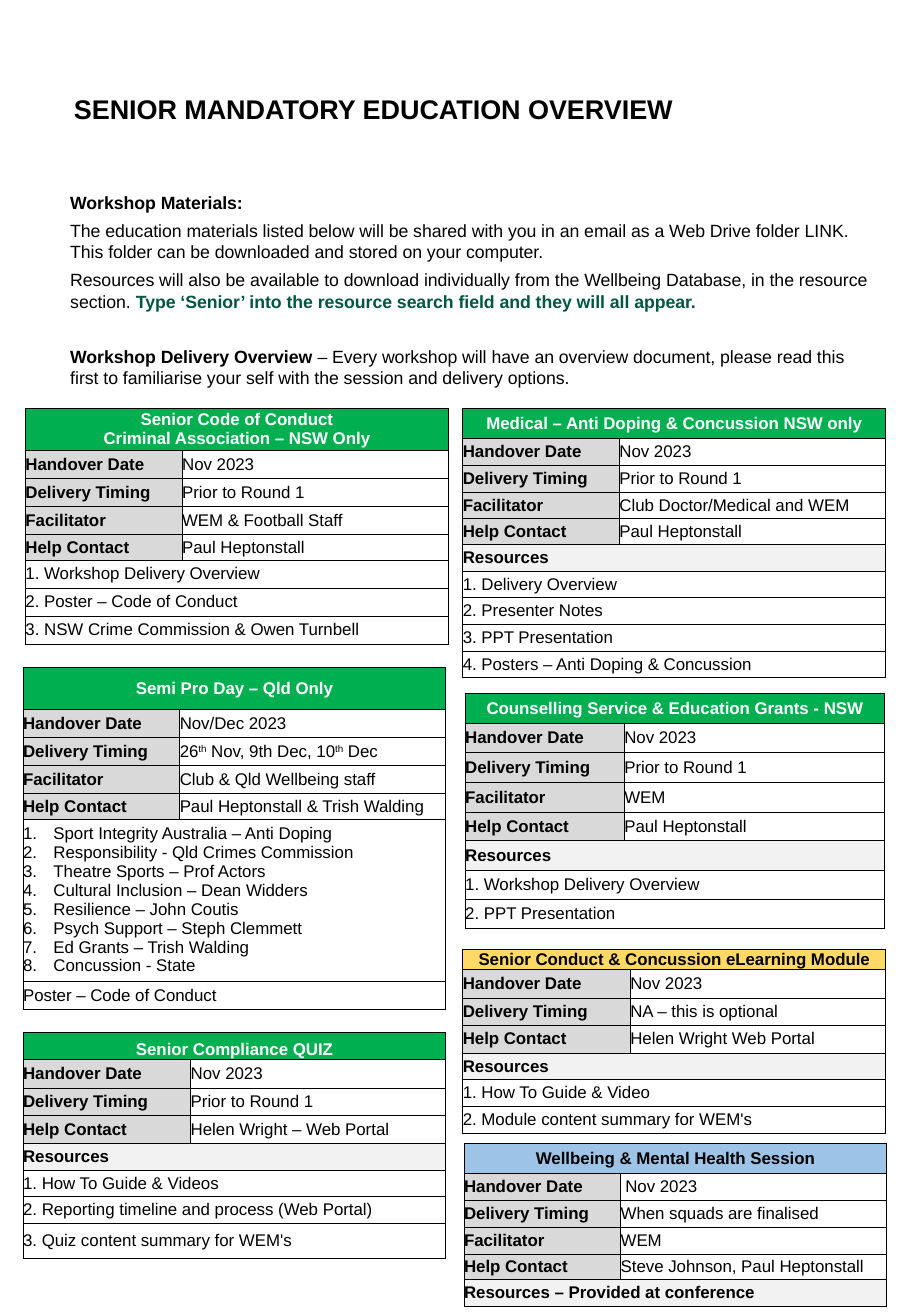
import pptx
import pptx.util
import pptx.dml.color
import pptx.enum.text
import pptx.oxml
import pptx.oxml.ns
from lxml import etree

Inches = pptx.util.Inches
Pt = pptx.util.Pt
RGBColor = pptx.dml.color.RGBColor
ALIGN = pptx.enum.text.PP_ALIGN
ANCHOR = pptx.enum.text.MSO_ANCHOR

BLACK = RGBColor(0x00, 0x00, 0x00)
WHITE = RGBColor(0xFF, 0xFF, 0xFF)
DARK_GREEN = RGBColor(0x00, 0x57, 0x3F)
GREEN = RGBColor(0x00, 0xB0, 0x50)
YELLOW = RGBColor(0xFF, 0xD9, 0x66)
BLUE = RGBColor(0x9D, 0xC3, 0xE6)
LABEL_GREY = RGBColor(0xD9, 0xD9, 0xD9)
PALE_GREY = RGBColor(0xF2, 0xF2, 0xF2)

LABELS = ["Handover Date", "Delivery Timing", "Facilitator", "Help Contact"]


def add_run(p, text, size, color=BLACK, bold=False):
    r = p.add_run()
    r.text = text
    r.font.name = "Arial"
    r.font.size = Pt(size)
    r.font.color.rgb = color
    r.font.bold = bold
    return r


def fill_cell(cell, content, fill=None, color=BLACK, bold=False, align=ALIGN.LEFT, anchor=ANCHOR.MIDDLE):
    cell.margin_left = cell.margin_right = cell.margin_top = cell.margin_bottom = 0
    cell.vertical_anchor = anchor
    tcPr = cell._tc.get_or_add_tcPr()
    for side in ("lnL", "lnR", "lnT", "lnB"):
        ln = etree.SubElement(tcPr, pptx.oxml.ns.qn("a:" + side), w="6350")
        solid = etree.SubElement(ln, pptx.oxml.ns.qn("a:solidFill"))
        etree.SubElement(solid, pptx.oxml.ns.qn("a:srgbClr"), val=str(BLACK))
    if fill is None:
        cell.fill.background()
    else:
        cell.fill.solid()
        cell.fill.fore_color.rgb = fill
    numbered = isinstance(content, list)
    tf = cell.text_frame
    for i, line in enumerate(content if numbered else content.split("\n")):
        p = tf.paragraphs[0] if i == 0 else tf.add_paragraph()
        p.alignment = align
        if numbered:
            pPr = p._p.get_or_add_pPr()
            pPr.set("marL", str(Inches(0.25)))
            pPr.set("indent", str(-Inches(0.25)))
            etree.SubElement(pPr, pptx.oxml.ns.qn("a:buFont"), typeface="+mj-lt")
            etree.SubElement(pPr, pptx.oxml.ns.qn("a:buAutoNum"), type="arabicPeriod")
        for k, part in enumerate(line.split("^")):
            r = add_run(p, part, 10, color, bold)
            if k % 2:
                r._r.get_or_add_rPr().set("baseline", "30000")


prs = pptx.Presentation()
prs.slide_width = Inches(7.5)
prs.slide_height = Inches(10.83)
s = prs.slides.add_slide(prs.slide_layouts[6])

title = s.shapes.add_textbox(Inches(0.51), Inches(0.58), Inches(6.48), Inches(0.66))
tf = title.text_frame
tf.word_wrap = True
tf.vertical_anchor = ANCHOR.MIDDLE
p = tf.paragraphs[0]
p.line_spacing = 0.9
add_run(p, "SENIOR MANDATORY EDUCATION OVERVIEW", 16, bold=True)

INTRO = [
    (0, [("Workshop Materials:", BLACK, True)]),
    (2, [("The education materials listed below will be shared with you in an email as a Web Drive folder LINK. "
          "This folder can be downloaded and stored on your computer.", BLACK, False)]),
    (2, [("Resources will also be available to download individually from the Wellbeing Database, "
          "in the resource section. ", BLACK, False),
         ("Type ‘Senior’ into the resource search field and they will all appear.", DARK_GREEN, True)]),
    (18, [("Workshop Delivery Overview ", BLACK, True),
          ("– Every workshop will have an overview document, please read this first to familiarise "
           "your self with the session and delivery options.", BLACK, False)]),
]
intro = s.shapes.add_textbox(Inches(0.48), Inches(1.53), Inches(6.81), Inches(1.75))
tf = intro.text_frame
tf.word_wrap = True
for i, (before, runs) in enumerate(INTRO):
    p = tf.paragraphs[0] if i == 0 else tf.add_paragraph()
    p.space_before = Pt(before)
    p.space_after = Pt(2)
    for text, color, bold in runs:
        add_run(p, text, 10.5, color, bold)

CARDS = [
    (0.21, 3.36, [1.29, 2.19], [0.35, 0.23, 0.23, 0.23, 0.21, 0.23, 0.23, 0.23],
     "Senior Code of Conduct\nCriminal Association – NSW Only", GREEN, WHITE, ANCHOR.MIDDLE,
     ["Nov 2023", "Prior to Round 1", "WEM & Football Staff", "Paul Heptonstall"],
     ["1. Workshop Delivery Overview", "2. Poster – Code of Conduct",
      "3. NSW Crime Commission & Owen Turnbell"]),
    (0.19, 5.49, [1.29, 2.19], [0.35, 0.23, 0.23, 0.23, 0.21, 1.33, 0.23],
     "Semi Pro Day – Qld Only", GREEN, WHITE, ANCHOR.MIDDLE,
     ["Nov/Dec 2023", "26^th^ Nov, 9th Dec, 10^th^ Dec", "Club & Qld Wellbeing staff",
      "Paul Heptonstall & Trish Walding"],
     [["Sport Integrity Australia – Anti Doping", "Responsibility - Qld Crimes Commission",
       "Theatre Sports – Prof Actors", "Cultural Inclusion – Dean Widders", "Resilience – John Coutis",
       "Psych Support – Steph Clemmett", "Ed Grants – Trish Walding", "Concussion - State"],
      "Poster – Code of Conduct"]),
    (0.19, 8.5, [1.38, 2.1], [0.22, 0.24, 0.22, 0.23, 0.22, 0.22, 0.22, 0.29],
     "Senior Compliance QUIZ", GREEN, WHITE, ANCHOR.BOTTOM,
     ["Nov 2023", "Prior to Round 1", None, "Helen Wright – Web Portal"],
     ["Resources", "1. How To Guide & Videos", "2. Reporting timeline and process (Web Portal)",
      "3. Quiz content summary for WEM's"]),
    (3.81, 3.36, [1.29, 2.19], [0.25, 0.22, 0.22, 0.22, 0.21, 0.22, 0.22, 0.22, 0.22, 0.22],
     "Medical – Anti Doping & Concussion NSW only", GREEN, WHITE, ANCHOR.MIDDLE,
     ["Nov 2023", "Prior to Round 1", "Club Doctor/Medical and WEM", "Paul Heptonstall"],
     ["Resources", "1. Delivery Overview", "2. Presenter Notes", "3. PPT Presentation",
      "4. Posters – Anti Doping & Concussion"]),
    (3.83, 5.71, [1.31, 2.14], [0.24, 0.24, 0.25, 0.25, 0.23, 0.24, 0.24, 0.24],
     "Counselling Service & Education Grants - NSW", GREEN, WHITE, ANCHOR.MIDDLE,
     ["Nov 2023", "Prior to Round 1", "WEM", "Paul Heptonstall"],
     ["Resources", "1. Workshop Delivery Overview", "2. PPT Presentation"]),
    (3.81, 7.81, [1.38, 2.1], [0.16, 0.24, 0.22, 0.23, 0.22, 0.22, 0.22],
     "Senior Conduct & Concussion eLearning Module", YELLOW, BLACK, ANCHOR.BOTTOM,
     ["Nov 2023", "NA – this is optional", None, "Helen Wright Web Portal"],
     ["Resources", "1. How To Guide & Video", "2. Module content summary for WEM's"]),
    (3.82, 9.41, [1.29, 2.19], [0.25, 0.22, 0.22, 0.22, 0.21, 0.22],
     "Wellbeing & Mental Health Session", BLUE, BLACK, ANCHOR.MIDDLE,
     [" Nov 2023", "When squads are finalised", "WEM", "Steve Johnson, Paul Heptonstall"],
     ["Resources – Provided at conference"]),
]

for left, top, widths, heights, heading, fill, color, anchor, facts, resources in CARDS:
    frame = s.shapes.add_table(len(heights), 2, Inches(left), Inches(top),
                               Inches(sum(widths)), Inches(sum(heights)))
    table = frame.table
    table.first_row = False
    table.horz_banding = False
    for column, width in zip(table.columns, widths):
        column.width = Inches(width)
    for row, height in zip(table.rows, heights):
        row.height = Inches(height)

    details = [(label, fact) for label, fact in zip(LABELS, facts) if fact]
    for i, (label, fact) in enumerate(details, 1):
        fill_cell(table.cell(i, 0), label, LABEL_GREY, bold=True)
        fill_cell(table.cell(i, 1), fact)

    wide_rows = [0, *range(len(details) + 1, len(heights))]
    for i, content in zip(wide_rows, [heading, *resources]):
        table.cell(i, 0).merge(table.cell(i, 1))
        fill_cell(table.cell(i, 1), "")
        if i == 0:
            fill_cell(table.cell(i, 0), content, fill, color, True, ALIGN.CENTER, anchor)
        elif content[0:9] == "Resources":
            fill_cell(table.cell(i, 0), content, PALE_GREY, bold=True)
        else:
            fill_cell(table.cell(i, 0), content)

prs.save("out.pptx")
